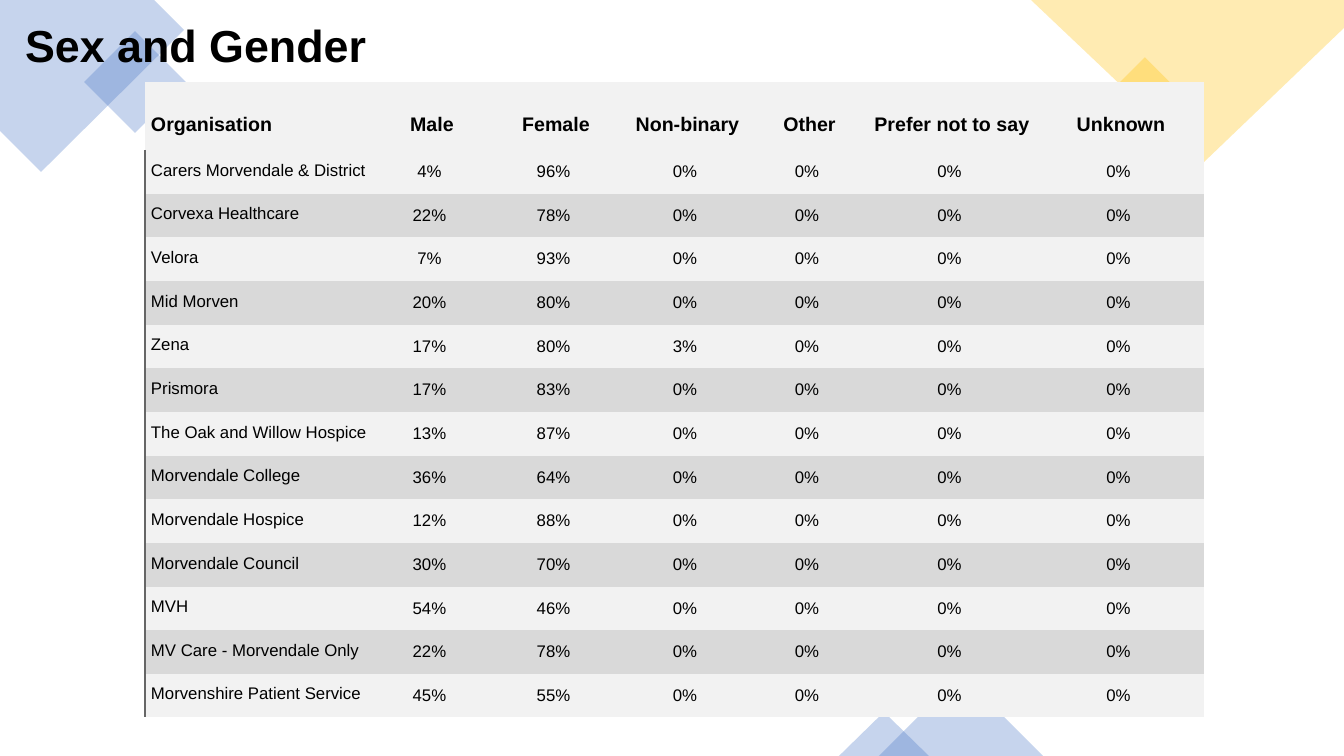
from dataclasses import dataclass

from lxml import etree
from pptx import Presentation
from pptx.dml.color import RGBColor
from pptx.enum.shapes import MSO_SHAPE
from pptx.enum.text import MSO_ANCHOR, MSO_AUTO_SIZE, PP_ALIGN
from pptx.oxml.ns import qn
from pptx.util import Pt

RECT, PEAK = MSO_SHAPE.RECTANGLE, MSO_SHAPE.ISOSCELES_TRIANGLE
LEFT, CENTER = PP_ALIGN.LEFT, PP_ALIGN.CENTER
MIDDLE, BOTTOM = MSO_ANCHOR.MIDDLE, MSO_ANCHOR.BOTTOM

# Content
TITLE = "Sex and Gender"
HEADS = ["Organisation", "Male", "Female", "Non-binary", "Other",
         "Prefer not to say", "Unknown"]
ROWS = [
    ("Carers Morvendale & District", 4, 96, 0, 0, 0, 0),
    ("Corvexa Healthcare", 22, 78, 0, 0, 0, 0),
    ("Velora", 7, 93, 0, 0, 0, 0),
    ("Mid Morven", 20, 80, 0, 0, 0, 0),
    ("Zena", 17, 80, 3, 0, 0, 0),
    ("Prismora", 17, 83, 0, 0, 0, 0),
    ("The Oak and Willow Hospice", 13, 87, 0, 0, 0, 0),
    ("Morvendale College", 36, 64, 0, 0, 0, 0),
    ("Morvendale Hospice", 12, 88, 0, 0, 0, 0),
    ("Morvendale Council", 30, 70, 0, 0, 0, 0),
    ("MVH", 54, 46, 0, 0, 0, 0),
    ("MV Care - Morvendale Only", 22, 78, 0, 0, 0, 0),
    ("Morvenshire Patient Service", 45, 55, 0, 0, 0, 0),
]


@dataclass(frozen=True)
class Theme:
    font: str = "Arial"
    ink: str = "000000"
    blue: str = "4472C4"
    gold: str = "FFC000"
    light: str = "F2F2F2"
    dark: str = "D9D9D9"
    edge: str = "666666"
    alpha: int = 30
    title: int = 32
    head: int = 14
    body: int = 12


THEME = Theme()

# Layout in px
WIDE, HIGH = 1344, 756
SCALE = 12192000 / WIDE
TITLE_BOX = (15, 19, 1159, 58)
TABLE_AT = (145, 82)
COLS = [229, 111, 137, 126, 118, 167, 171]
HEAD_H, BODY_H = 68, 568
PAD, NO_PAD = (6, 2, 1, 14), (0, 0, 0, 0)
NO_GRID = "{2D5ABB26-0587-4C30-8999-92F81FD0307C}"

OUTLINES = [
    ([(154, 0), (0, 0), (0, 131), (41, 172), (184, 30)], THEME.blue),
    ([(1344, 0), (1031, 0), (1203, 163), (1344, 28)], THEME.gold),
]
PRESETS = [
    (RECT, (99, 46, 72, 72), 315, THEME.blue),
    (RECT, (1107, 73, 76, 76), 315, THEME.gold),
    (PEAK, (879, 674, 164, 82), 0, THEME.blue),
    (PEAK, (839, 712, 90, 44), 0, THEME.blue),
]


def px(n):
    return round(n * SCALE)


def paint(shape, color):
    shape.shadow.inherit = False
    shape.line.fill.background()
    shape.fill.solid()
    shape.fill.fore_color.rgb = RGBColor.from_string(color)
    for tint in shape.element.spPr.iter(qn("a:srgbClr")):
        etree.SubElement(tint, qn("a:alpha"), val=str(THEME.alpha * 1000))


def write(frame, text, size, bold=False, align=LEFT, space=None):
    para = frame.paragraphs[0]
    para.alignment = align
    para.line_spacing = space
    run = para.add_run()
    run.text = text
    font = run.font
    font.name, font.size, font.bold = THEME.font, Pt(size), bold
    font.color.rgb = RGBColor.from_string(THEME.ink)


def rule_left(cell):
    line = etree.Element(qn("a:lnL"), w=str(Pt(1)))
    fill = etree.SubElement(line, qn("a:solidFill"))
    etree.SubElement(fill, qn("a:srgbClr"), val=THEME.edge)
    cell._tc.get_or_add_tcPr().insert(0, line)


def add_decor(slide):
    for dots, color in OUTLINES:
        pen = slide.shapes.build_freeform(*dots[0], scale=SCALE)
        pen.add_line_segments(dots[1:], close=True)
        paint(pen.convert_to_shape(), color)
    for kind, box, turn, color in PRESETS:
        shape = slide.shapes.add_shape(kind, *map(px, box))
        shape.rotation = turn
        paint(shape, color)


def add_grid(slide):
    size = (sum(COLS), HEAD_H + BODY_H)
    frame = slide.shapes.add_table(len(ROWS) + 1, len(COLS),
                                   *map(px, TABLE_AT + size))
    table = frame.table
    table.first_row = table.horz_banding = False
    next(frame.element.iter(qn("a:tableStyleId"))).text = NO_GRID
    for col, wide in zip(table.columns, COLS):
        col.width = px(wide)

    body = [(name, *(f"{n}%" for n in nums)) for name, *nums in ROWS]
    for r, texts in enumerate([HEADS] + body):
        head = r == 0
        table.rows[r].height = px(HEAD_H if head else BODY_H / len(ROWS))
        shade = THEME.light if head or r % 2 else THEME.dark
        for c, text in enumerate(texts):
            cell = table.cell(r, c)
            label = head or c == 0
            pad = map(px, PAD if label else NO_PAD)
            (cell.margin_left, cell.margin_top,
             cell.margin_right, cell.margin_bottom) = pad
            cell.vertical_anchor = BOTTOM if label else MIDDLE
            cell.fill.solid()
            cell.fill.fore_color.rgb = RGBColor.from_string(shade)
            write(cell.text_frame, text, THEME.head if head else THEME.body,
                  bold=head, align=CENTER if c else LEFT)
            if c == 0 and not head:
                rule_left(cell)


def set_title(slide):
    title = slide.shapes.title
    title.left, title.top, title.width, title.height = map(px, TITLE_BOX)
    frame = title.text_frame
    frame.auto_size = MSO_AUTO_SIZE.NONE
    frame.word_wrap = True
    frame.vertical_anchor = MIDDLE
    write(frame, TITLE, THEME.title, bold=True, space=0.9)
    # Bring the title to the front
    title.element.getparent().append(title.element)


def main():
    deck = Presentation()
    deck.slide_width, deck.slide_height = px(WIDE), px(HIGH)
    slide = deck.slides.add_slide(deck.slide_layouts.get_by_name("Title Only"))
    add_decor(slide)
    add_grid(slide)
    set_title(slide)
    deck.save("out.pptx")


if __name__ == "__main__":
    main()
